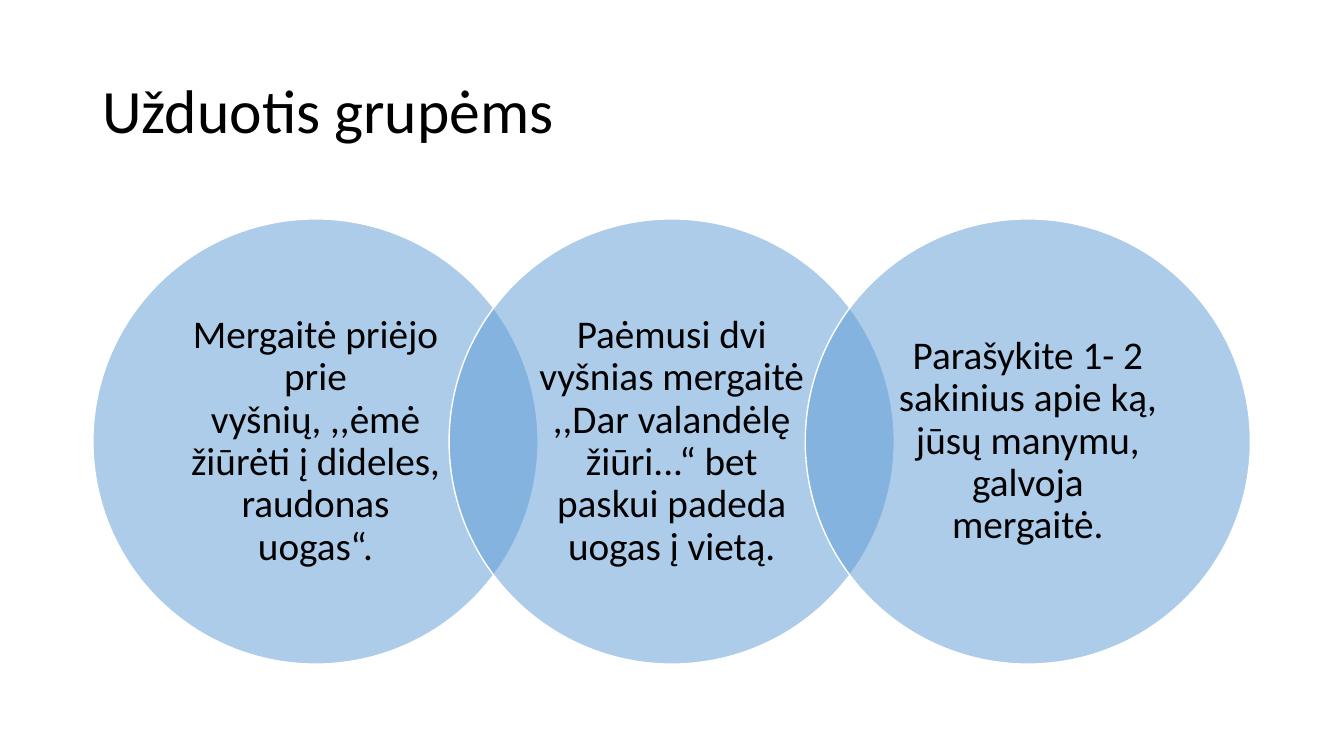
import dataclasses

import lxml.etree
import pptx
import pptx.dml.color
import pptx.enum.shapes
import pptx.enum.text
import pptx.oxml.ns
import pptx.slide
import pptx.text.text
import pptx.util

Pt = pptx.util.Pt
BLACK = pptx.dml.color.RGBColor(0x00, 0x00, 0x00)
WHITE = pptx.dml.color.RGBColor(0xFF, 0xFF, 0xFF)
BLUE = pptx.dml.color.RGBColor(0x5B, 0x9B, 0xD5)
FONT = "Calibri"

DIAMETER = 318
CIRCLE_LEFT = 66.4
CIRCLE_TOP = 156.4
CIRCLE_STEP = 254.4
TEXT_SIDE = 224.8
TEXT_INSET = 16.5


@dataclasses.dataclass(frozen=True)
class Task:
    """One circle of the chain and the wording inside it."""

    left: float
    wording: str


WORDINGS = (
    "Mergaitė priėjo prie vyšnių, ,,ėmė žiūrėti į dideles, raudonas uogas“.",
    "Paėmusi dvi vyšnias mergaitė ,,Dar valandėlę žiūri...“ bet paskui padeda uogas į vietą.",
    "Parašykite 1- 2 sakinius apie ką, jūsų manymu, galvoja mergaitė.",
)
TASKS = [
    Task(CIRCLE_LEFT + index * CIRCLE_STEP, wording)
    for index, wording in enumerate(WORDINGS)
]


def style_paragraph(
    para: pptx.text.text._Paragraph, size: float, align: pptx.enum.text.PP_ALIGN
) -> None:
    para.alignment = align
    para.line_spacing = 0.9
    para.font.name = FONT
    para.font.size = Pt(size)
    para.font.color.rgb = BLACK


def add_title(page: pptx.slide.Slide, wording: str) -> None:
    title = page.shapes.title
    title.left, title.top = Pt(66), Pt(28.8)
    title.width, title.height = Pt(828), Pt(104.4)
    title.text_frame.text = wording
    title.text_frame.vertical_anchor = pptx.enum.text.MSO_ANCHOR.MIDDLE
    style_paragraph(title.text_frame.paragraphs[0], 44, pptx.enum.text.PP_ALIGN.LEFT)


def add_circle(page: pptx.slide.Slide, task: Task) -> None:
    circle = page.shapes.add_shape(
        pptx.enum.shapes.MSO_SHAPE.OVAL,
        Pt(task.left), Pt(CIRCLE_TOP), Pt(DIAMETER), Pt(DIAMETER),
    )
    circle.shadow.inherit = False
    circle.fill.solid()
    circle.fill.fore_color.rgb = BLUE
    color = circle.fill._xPr.find(".//" + pptx.oxml.ns.qn("a:srgbClr"))
    lxml.etree.SubElement(color, pptx.oxml.ns.qn("a:alpha"), val="50000")
    circle.line.color.rgb = WHITE
    circle.line.width = Pt(1)


def add_wording(page: pptx.slide.Slide, task: Task) -> None:
    margin = (DIAMETER - TEXT_SIDE) / 2
    box = page.shapes.add_textbox(
        Pt(task.left + margin), Pt(CIRCLE_TOP + margin), Pt(TEXT_SIDE), Pt(TEXT_SIDE)
    )
    frame = box.text_frame
    frame.word_wrap = True
    frame.vertical_anchor = pptx.enum.text.MSO_ANCHOR.MIDDLE
    frame.margin_left = frame.margin_right = Pt(TEXT_INSET)
    frame.margin_top = frame.margin_bottom = Pt(2.9)
    frame.text = task.wording
    style_paragraph(frame.paragraphs[0], 28, pptx.enum.text.PP_ALIGN.CENTER)


def main() -> None:
    deck = pptx.Presentation()
    deck.slide_width, deck.slide_height = Pt(960), Pt(540)
    page = deck.slides.add_slide(deck.slide_layouts.get_by_name("Title Only"))
    add_title(page, "Užduotis grupėms")
    for task in TASKS:
        add_circle(page, task)
        add_wording(page, task)
    deck.save("out.pptx")


if __name__ == "__main__":
    main()
